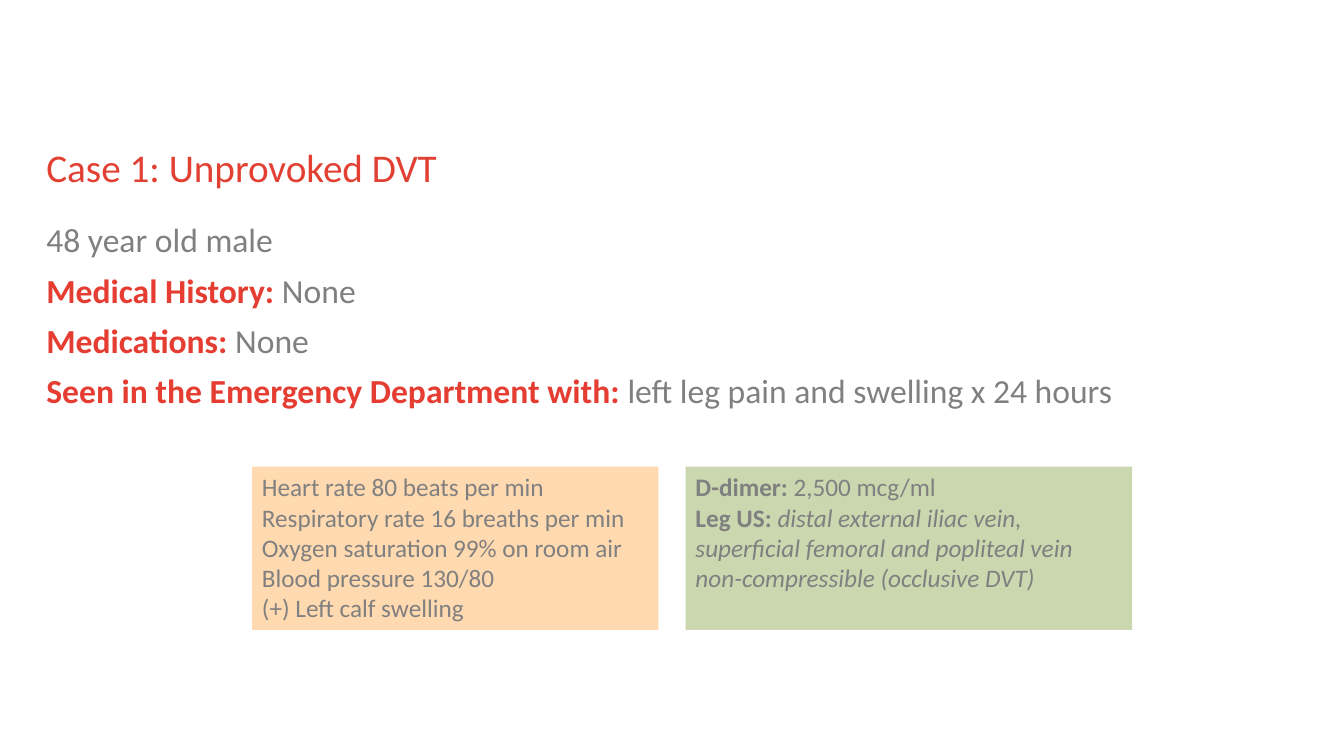
from dataclasses import dataclass

from pptx import Presentation
from pptx.dml.color import RGBColor
from pptx.enum.shapes import MSO_SHAPE
from pptx.enum.text import MSO_ANCHOR, PP_ALIGN
from pptx.util import Pt

RECTANGLE = MSO_SHAPE.RECTANGLE
TOP = MSO_ANCHOR.TOP
LEFT = PP_ALIGN.LEFT
EMU_PER_PX = 9144


@dataclass(frozen=True)
class Theme:
    font: str = "Calibri"
    title_color: str = "E14033"
    label_color: str = "E53D31"
    text_color: str = "808080"
    vitals_fill: str = "FFD9AF"
    results_fill: str = "CBD7AF"
    title_size: int = 28
    body_size: int = 24
    card_size: int = 18


def px(length):
    return length * EMU_PER_PX


def add_span(para, text, font, size, color, bold=False, italic=False):
    span = para.add_run()
    span.text = text
    span.font.name = font
    span.font.size = Pt(size)
    span.font.color.rgb = RGBColor.from_string(color)
    span.font.bold = bold
    span.font.italic = italic


class CasePage:
    def __init__(self, deck, theme):
        self.theme = theme
        self.page = deck.slides.add_slide(deck.slide_layouts[6])

    def fill_frame(self, frame, lines, size, line_spacing=1.0, space_before=0):
        frame.word_wrap = True
        frame.vertical_anchor = TOP
        for index, spans in enumerate(lines):
            para = frame.add_paragraph() if index else frame.paragraphs[0]
            para.alignment = LEFT
            para.line_spacing = line_spacing
            para.space_before = Pt(space_before if index else 0)
            for text, style in spans:
                style = {"color": self.theme.text_color, **style}
                add_span(para, text, self.theme.font, size, **style)

    def text(self, left, top, width, height, lines, size):
        box = self.page.shapes.add_textbox(px(left), px(top), px(width), px(height))
        frame = box.text_frame
        frame.margin_left = frame.margin_right = 0
        frame.margin_top = frame.margin_bottom = 0
        self.fill_frame(frame, lines, size, line_spacing=0.9, space_before=10)

    def card(self, left, top, width, height, lines, fill):
        box = self.page.shapes.add_shape(
            RECTANGLE, px(left), px(top), px(width), px(height)
        )
        box.shadow.inherit = False
        box.fill.solid()
        box.fill.fore_color.rgb = RGBColor.from_string(fill)
        box.line.fill.background()
        self.fill_frame(box.text_frame, lines, self.theme.card_size)


def main():
    theme = Theme()
    deck = Presentation()
    deck.slide_width, deck.slide_height = px(1333), px(750)
    case = CasePage(deck, theme)

    title = [[("Case 1: Unprovoked DVT", {"color": theme.title_color})]]
    case.text(46, 147, 1200, 46, title, theme.title_size)

    label = {"color": theme.label_color, "bold": True}
    history = [
        ("Medical History: ", "None"),
        ("Medications: ", "None"),
        (
            "Seen in the Emergency Department with: ",
            "left leg pain and swelling x 24 hours",
        ),
    ]
    body = [[("48 year old male", {})]]
    body += [[(name, label), (value, {})] for name, value in history]
    case.text(46, 222, 1200, 432, body, theme.body_size)

    vitals = [
        "Heart rate 80 beats per min",
        "Respiratory rate 16 breaths per min",
        "Oxygen saturation 99% on room air",
        "Blood pressure 130/80",
        "(+) Left calf swelling",
    ]
    results = [
        [("D-dimer: ", {"bold": True}), ("2,500 mcg/ml", {})],
        [
            ("Leg US: ", {"bold": True}),
            (
                "distal external iliac vein, superficial femoral and "
                "popliteal vein non-compressible (occlusive DVT)",
                {"italic": True},
            ),
        ],
    ]
    card_top, card_height = 463, 162
    vital_lines = [[(vital, {})] for vital in vitals]
    case.card(250, card_top, 403, card_height, vital_lines, theme.vitals_fill)
    case.card(680, card_top, 443, card_height, results, theme.results_fill)

    deck.save("out.pptx")


if __name__ == "__main__":
    main()
